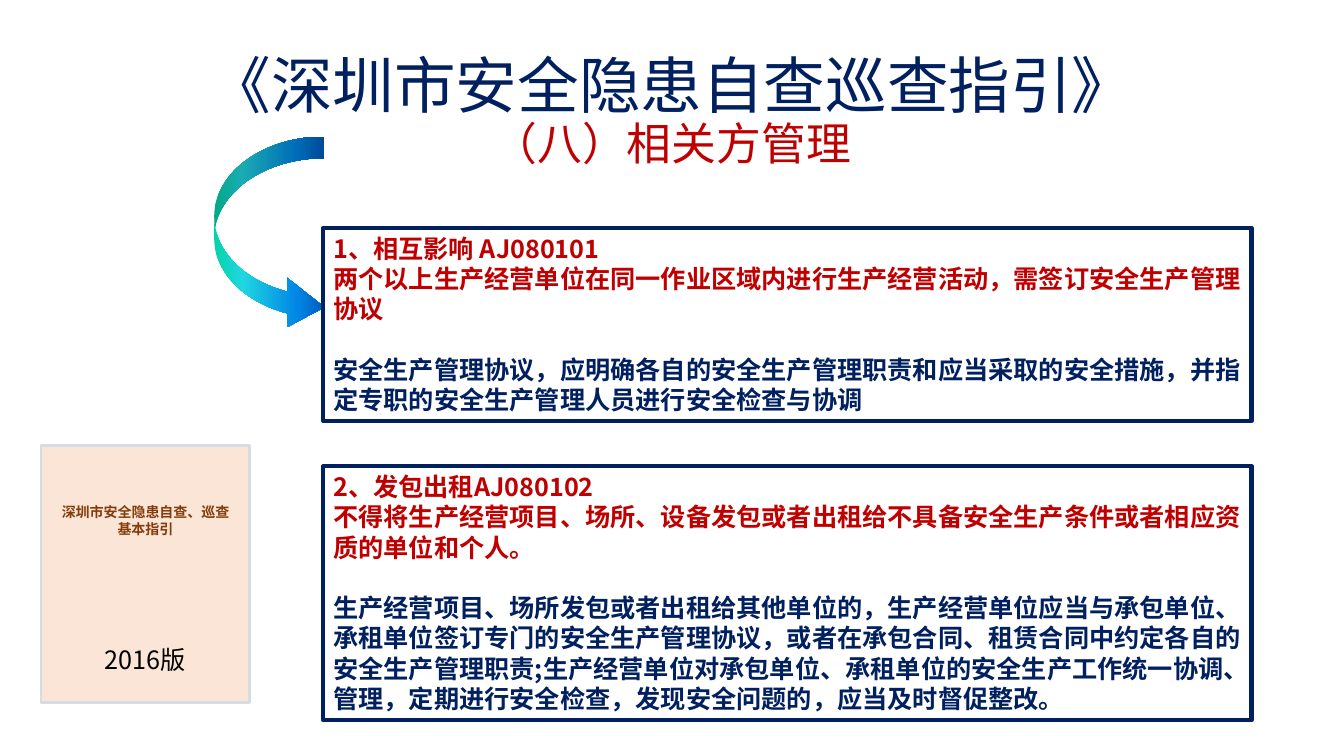
"""Builds the slide on managing related parties in safety self-checks."""
from dataclasses import dataclass
from typing import Optional

from lxml.etree import SubElement as Sub
from pptx import Presentation
from pptx.dml.color import RGBColor as Rgb
from pptx.enum.shapes import MSO_SHAPE as Kind
from pptx.enum.text import MSO_ANCHOR as Anchor, MSO_AUTO_SIZE as Auto, PP_ALIGN as Align
from pptx.oxml.ns import qn
from pptx.shapes.autoshape import Shape
from pptx.slide import Slide
from pptx.util import Pt

PX = 9525


@dataclass(frozen=True)
class Theme:
    face: str = "Noto Sans CJK SC"
    navy: str = "002060"
    red: str = "C00000"
    brown: str = "843C0B"
    black: str = "000000"
    peach: str = "FBE5D6"
    mist: str = "D6DCE5"
    sweep: tuple = ((0, "03D4A8"), (25, "21D6E0"), (75, "0087E6"), (100, "005CBF"))
    title: int = 44
    head: int = 32
    body: int = 18
    small: int = 10


T = Theme()


@dataclass(frozen=True)
class Line:
    text: str
    color: str
    size: int = T.body
    bold: bool = True
    gap: float = 0
    join: bool = False


@dataclass(frozen=True)
class Box:
    at: tuple[int, int, int, int]
    lines: tuple[Line, ...]
    fill: Optional[str] = None
    edge: Optional[str] = None
    width: int = 3
    mid: bool = False
    top: int = 5
    lead: float = 1.0


def note(y: int, high: int, head: str, rule: str, duty: str) -> Box:
    lines = (Line(head, T.red), Line(rule, T.red), Line(duty, T.navy, gap=21.6))
    return Box((308, y, 884, high), lines, edge=T.navy)


BOXES = (
    Box((88, 38, 1104, 139), (
        Line("《深圳市安全隐患自查巡查指引》", T.navy, T.title, False),
        Line("（八）相关方管理", T.red, T.head, False, join=True),
    ), mid=True, lead=0.9),
    note(217, 184, "1、相互影响 AJ080101",
         "两个以上生产经营单位在同一作业区域内进行生产经营活动，需签订安全生产管理协议",
         "安全生产管理协议，应明确各自的安全生产管理职责和应当采取的安全措施，"
         "并指定专职的安全生产管理人员进行安全检查与协调"),
    note(444, 242, "2、发包出租AJ080102",
         "不得将生产经营项目、场所、设备发包或者出租给不具备安全生产条件或者相应资质的单位和个人。",
         "生产经营项目、场所发包或者出租给其他单位的，生产经营单位应当与承包单位、"
         "承租单位签订专门的安全生产管理协议，或者在承包合同、租赁合同中约定各自的"
         "安全生产管理职责;生产经营单位对承包单位、承租单位的安全生产工作统一协调、"
         "管理，定期进行安全检查，发现安全问题的，应当及时督促整改。"),
    Box((39, 424, 199, 245), (
        Line("深圳市安全隐患自查、巡查", T.brown, T.small),
        Line("基本指引", T.brown, T.small),
        Line("2016版", T.black, bold=False, gap=76.8),
    ), T.peach, T.mist, 2, mid=True, top=34),
)


def put(item: object, **vals: object) -> None:
    for name, val in vals.items():
        setattr(item, name, val)


def place(slide: Slide, kind: Kind, at: tuple[int, int, int, int]) -> Shape:
    shape = slide.shapes.add_shape(kind, *(n * PX for n in at))
    shape.shadow.inherit = False
    return shape


def write(shape: Shape, box: Box) -> None:
    frame = shape.text_frame
    put(frame, word_wrap=True, margin_top=box.top * PX,
        vertical_anchor=Anchor.MIDDLE if box.mid else Anchor.TOP,
        auto_size=Auto.NONE if box.mid else Auto.SHAPE_TO_FIT_TEXT)
    para = frame.paragraphs[0]
    for i, line in enumerate(box.lines):
        if line.join:
            para.add_line_break()
        elif i:
            para = frame.add_paragraph()
        put(para, alignment=Align.CENTER if box.mid else Align.LEFT,
            line_spacing=box.lead, space_before=Pt(line.gap))
        run = para.add_run()
        run.text = line.text
        put(run.font, name=T.face, size=Pt(line.size), bold=line.bold)
        run.font.color.rgb = Rgb.from_string(line.color)
        Sub(run.font._element, qn("a:ea"), typeface=T.face)


def draw(slide: Slide, box: Box) -> None:
    shape = place(slide, Kind.RECTANGLE, box.at)
    for fill, color in ((shape.fill, box.fill), (shape.line.fill, box.edge)):
        if color:
            fill.solid()
            fill.fore_color.rgb = Rgb.from_string(color)
        else:
            fill.background()
    if box.edge:
        shape.line.width = Pt(box.width)
    write(shape, box)


def arrow(slide: Slide) -> None:
    shape = place(slide, Kind.CURVED_RIGHT_ARROW, (204, 130, 105, 186))
    for i, val in enumerate((0.196, 0.447, 0.337)):
        shape.adjustments[i] = val
    shape.line.fill.background()
    shape.fill.gradient()
    shape.fill.gradient_angle = 0
    stops = shape._element.spPr.find(qn("a:gradFill")).find(qn("a:gsLst"))
    for stop in list(stops):
        stops.remove(stop)
    for pos, color in T.sweep:
        stop = Sub(stops, qn("a:gs"), pos=str(pos * 1000))
        Sub(stop, qn("a:srgbClr"), val=color)


def main() -> None:
    deck = Presentation()
    put(deck, slide_width=1280 * PX, slide_height=720 * PX)
    slide = deck.slides.add_slide(deck.slide_layouts[6])
    title, *rest = BOXES
    draw(slide, title)
    arrow(slide)
    for box in rest:
        draw(slide, box)
    deck.save("out.pptx")


if __name__ == "__main__":
    main()
